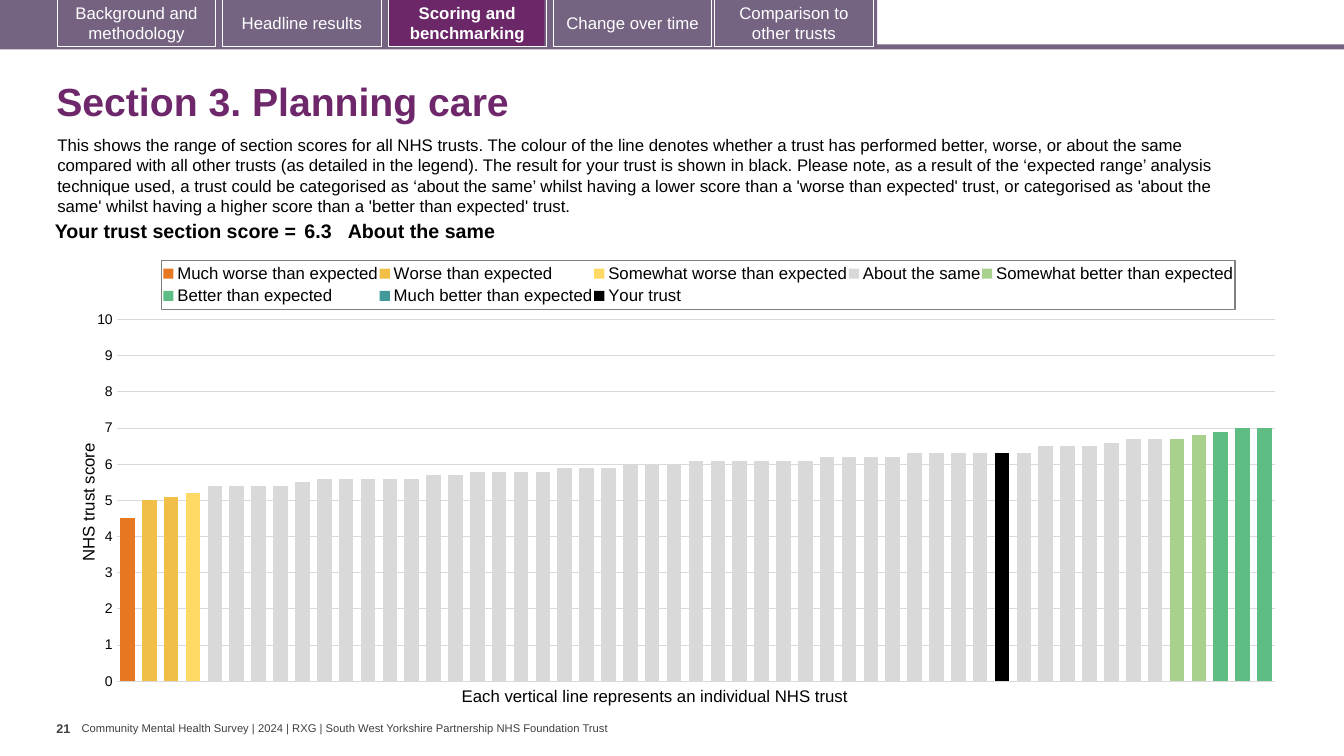
from copy import deepcopy
from lxml import etree
from pptx import Presentation
from pptx.chart.data import CategoryChartData
from pptx.dml.color import RGBColor
from pptx.enum import chart as kinds, shapes, text
from pptx.oxml.ns import qn
from pptx.util import Inches, Pt

PURPLE, BAND, WHITE, BLACK, GREY = "6D276A", "756382", "FFFFFF", "000000", "404040"
MID, TOP = text.MSO_ANCHOR.MIDDLE, text.MSO_ANCHOR.TOP
TABS = [(0.57, "Background and methodology", "746280"),
        (2.21, "Headline results", None),
        (3.85, "Scoring and benchmarking", None),
        (5.49, "Change over time", BAND),
        (7.09, "Comparison to other trusts", BAND)]
INTRO = ("This shows the range of section scores for all NHS trusts. The colour of the line "
         "denotes whether a trust has performed better, worse, or about the same compared with "
         "all other trusts (as detailed in the legend). The result for your trust is shown in "
         "black. Please note, as a result of the ‘expected range’ analysis technique used, a "
         "trust could be categorised as ‘about the same’ whilst having a lower score than a "
         "'worse than expected' trust, or categorised as 'about the same' whilst having a higher "
         "score than a 'better than expected' trust.")
COUNT = 53
SAME = ([5.4] * 4 + [5.5] + [5.6] * 5 + [5.7] * 2 + [5.8] * 4 + [5.9] * 3 + [6] * 3
        + [6.1] * 6 + [6.2] * 4 + [6.3] * 6 + [6.5] * 3 + [6.6] + [6.7] * 2)
SERIES = [("Much worse than expected", "E87722", 0, [4.5]),
          ("Worse than expected", "F1BE48", 1, [5, 5.1]),
          ("Somewhat worse than expected", "FFD966", 3, [5.2]),
          ("About the same", "D9D9D9", 4, SAME),
          ("Somewhat better than expected", "A9D18E", 48, [6.7, 6.8]),
          ("Better than expected", "5FBD83", 50, [6.9, 7, 7]),
          ("Much better than expected", "419999", 53, []),
          ("Your trust", BLACK, 40, [6.3])]


def put(item, **values):
    for key, value in values.items():
        setattr(item, key, value)


def tint(form, color):
    form.solid()
    form.fore_color.rgb = RGBColor.from_string(color)


def style(font, size, color, bold=False):
    put(font, name="Arial", size=Pt(size), bold=bold)
    font.color.rgb = RGBColor.from_string(color)


def write(frame, words, size, color, bold=False, align=None):
    para = frame.paragraphs[0]
    run = para.add_run()
    run.text = words
    style(run.font, size, color, bold)
    para.alignment = align
    return para


def label(slide, spot, words, size, color, bold=False, anchor=TOP, wrap=True, pad=(0.1, 0.05)):
    frame = slide.shapes.add_textbox(*map(Inches, spot)).text_frame
    across, down = map(Inches, pad)
    put(frame, word_wrap=wrap, vertical_anchor=anchor, margin_left=across,
        margin_right=across, margin_top=down, margin_bottom=down)
    return write(frame, words, size, color, bold)


def block(slide, spot, fill=None, line=None):
    shape = slide.shapes.add_shape(shapes.MSO_SHAPE.RECTANGLE, *map(Inches, spot))
    shape.shadow.inherit = False
    if fill:
        tint(shape.fill, fill)
    else:
        shape.fill.background()
    if line:
        tint(shape.line.fill, line)
        shape.line.width = Pt(0.75)
    else:
        shape.line.fill.background()
    return shape


def tabs(slide):
    block(slide, (0, 0.44, 13.33, 0.05), BAND)
    block(slide, (0, 0, 8.7, 0.47), BAND)
    block(slide, (3.86, 0, 1.54, 0.46), "6B2768")
    for left, words, fill in TABS:
        frame = block(slide, (left, -0.01, 1.57, 0.47), fill, WHITE).text_frame
        put(frame, word_wrap=True, vertical_anchor=MID)
        write(frame, words, 12, WHITE, words.startswith("Scoring"), text.PP_ALIGN.CENTER)


def score(slide):
    spot = map(Inches, (0.35, 2.15, 11.69, 0.31))
    table = slide.shapes.add_table(1, 3, *spot).table
    put(table, first_row=False, horz_banding=False)
    cells = [(2.63, "Your trust section score =", 0.04, text.PP_ALIGN.RIGHT),
             (0.47, "6.3", 0.04, None), (8.59, "About the same", 0, None)]
    for col, (width, words, pad, align) in enumerate(cells):
        table.columns[col].width = Inches(width)
        cell = table.cell(0, col)
        cell.fill.background()
        put(cell, margin_left=Inches(pad), margin_right=Inches(pad),
            margin_top=Inches(0.04), margin_bottom=Inches(0.04))
        write(cell.text_frame, words, 14, BLACK, True, align)


def place(part, after, inner=False, **box):
    for old in part.findall(qn("c:layout")):
        part.remove(old)
    layout = etree.Element(qn("c:layout"))
    manual = etree.SubElement(layout, qn("c:manualLayout"))
    if inner:
        etree.SubElement(manual, qn("c:layoutTarget"), val="inner")
    for key in "xy":
        etree.SubElement(manual, qn(f"c:{key}Mode"), val="edge")
    for key, value in box.items():
        etree.SubElement(manual, qn(f"c:{key}"), val=str(value))
    if after:
        part.find(qn(after)).addnext(layout)
    else:
        part.insert(0, layout)


def second(area):
    bars = area.find(qn("c:barChart"))
    extra = deepcopy(bars)
    bars.addnext(extra)
    bars.remove(bars.findall(qn("c:ser"))[-1])
    for ser in extra.findall(qn("c:ser"))[:-1]:
        extra.remove(ser)
    cat, val = area.find(qn("c:catAx")), area.find(qn("c:valAx"))
    cats, vals = deepcopy(cat), deepcopy(val)
    val.addnext(vals)
    vals.addnext(cats)
    for tag in ("c:majorGridlines", "c:title"):
        vals.remove(vals.find(qn(tag)))
    for tag, value in (("axPos", "r"), ("tickLblPos", "none"), ("crosses", "max")):
        vals.find(qn(f"c:{tag}")).set("val", value)
    ids = {cat.find(qn("c:axId")).get("val"): "5001", val.find(qn("c:axId")).get("val"): "5002"}
    for part in (extra, cats, vals):
        for node in part.iter(qn("c:axId"), qn("c:crossAx")):
            node.set("val", ids[node.get("val")])


def graph(slide):
    data = CategoryChartData()
    data.categories = [str(n + 1) for n in range(COUNT)]
    for name, color, start, vals in SERIES:
        data.add_series(name, [None] * start + vals + [None] * (COUNT - start - len(vals)))
    spot = map(Inches, (0.67, 2.47, 12.15, 4.44))
    chart = slide.shapes.add_chart(kinds.XL_CHART_TYPE.COLUMN_CLUSTERED, *spot, data).chart
    put(chart, has_title=False, has_legend=True)
    style(chart.font, 10, BLACK)
    plot = chart.plots[0]
    put(plot, gap_width=50, overlap=100, vary_by_categories=False)
    for ser, (name, color, start, vals) in zip(plot.series, SERIES):
        tint(ser.format.fill, color)
    chart.category_axis.visible = False
    axis = chart.value_axis
    put(axis, minimum_scale=0, maximum_scale=10, major_unit=1,
        major_tick_mark=kinds.XL_TICK_MARK.NONE)
    style(axis.tick_labels.font, 10, BLACK)
    axis.format.line.fill.background()
    grid = axis.major_gridlines.format.line
    tint(grid.fill, "D9D9D9")
    grid.width = Pt(0.75)
    title = axis.axis_title
    write(title.text_frame, "NHS trust score", 12, BLACK)
    title.text_frame._txBody.bodyPr.set("rot", "-5400000")
    place(title._element, "c:tx", x=0.006, y=0.427)
    key = chart.legend
    put(key, position=kinds.XL_LEGEND_POSITION.TOP, include_in_layout=False)
    style(key.font, 12, BLACK)
    node = key._element
    place(node, "c:legendPos", x=0.077, y=0.025, w=0.876, h=0.11)
    shape = etree.Element(qn("c:spPr"))
    fill = etree.SubElement(etree.SubElement(shape, qn("a:ln"), w="9525"), qn("a:solidFill"))
    etree.SubElement(fill, qn("a:srgbClr"), val="7F7F7F")
    node.find(qn("c:txPr")).addprevious(shape)
    area = chart.element.find(".//" + qn("c:plotArea"))
    place(area, None, True, x=0.04, y=0.158, w=0.946, h=0.808)
    second(area)


def main():
    deck = Presentation()
    put(deck, slide_width=Inches(13.33), slide_height=Inches(7.5))
    slide = deck.slides.add_slide(deck.slide_layouts[6])
    label(slide, (0.81, 7.16, 5.3, 0.13), "Community Mental Health Survey | 2024 | RXG | "
          "South West Yorkshire Partnership NHS Foundation Trust", 8, GREY,
          anchor=MID, wrap=False, pad=(0, 0))
    tabs(slide)
    head = label(slide, (0.46, 0.67, 12.49, 0.72), "Section 3. Planning care", 28, PURPLE,
                 True, MID)
    head.line_spacing = 0.9
    label(slide, (0.56, 7.1, 0.25, 0.4), "21", 9, GREY, True, wrap=False, pad=(0, 0.05))
    label(slide, (0.47, 1.29, 12.13, 0.91), INTRO, 12, BLACK)
    label(slide, (4.48, 6.75, 4.11, 0.3),
          "Each vertical line represents an individual NHS trust", 12, BLACK, wrap=False)
    graph(slide)
    score(slide)
    deck.save("out.pptx")


if __name__ == "__main__":
    main()
